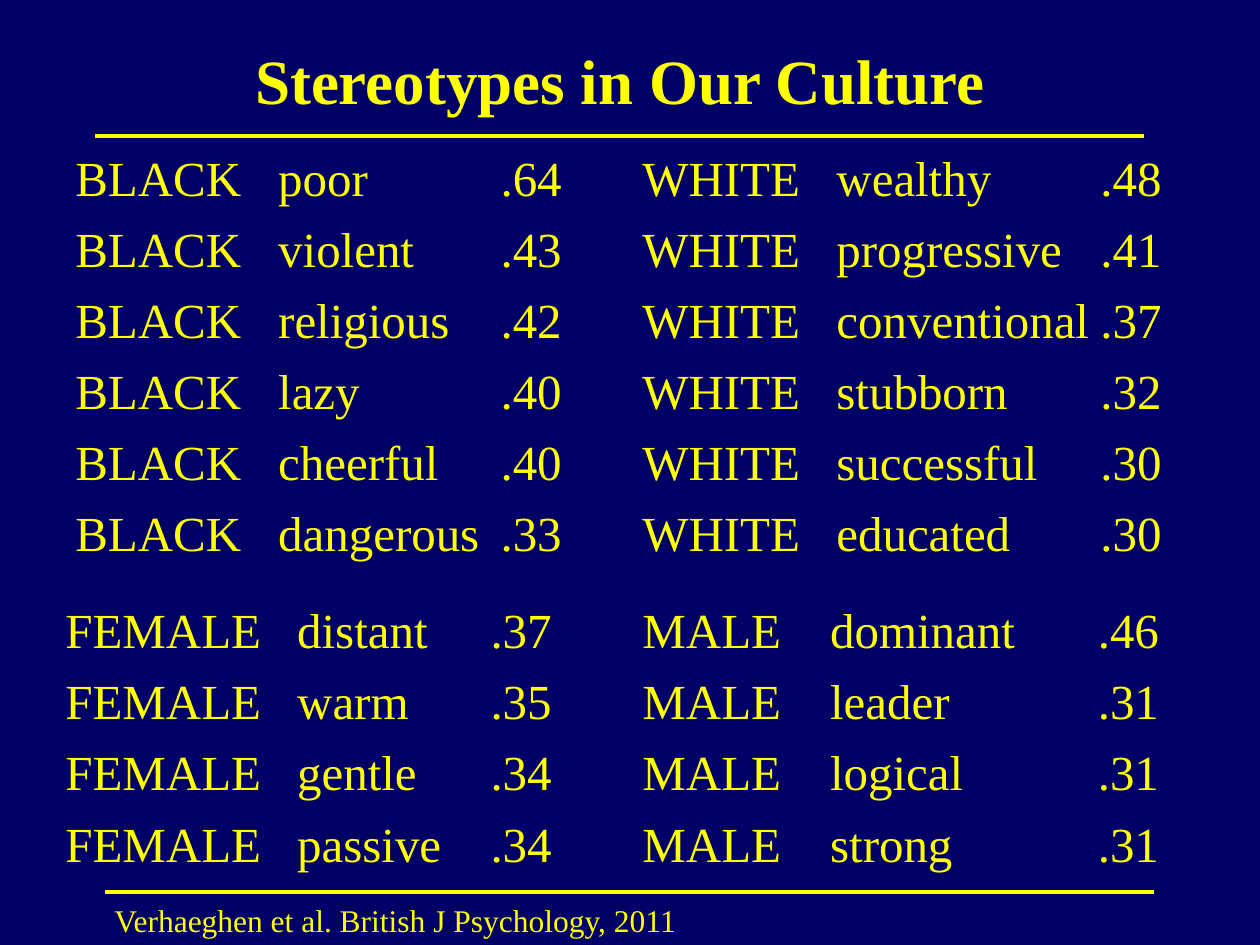
import pptx
import pptx.util
import pptx.dml.color
import pptx.enum.shapes
import pptx.enum.text
import pptx.oxml.ns
from lxml import etree

Inches = pptx.util.Inches
Pt = pptx.util.Pt
ANCHOR = pptx.enum.text.MSO_ANCHOR
ALIGN = pptx.enum.text.PP_ALIGN
qn = pptx.oxml.ns.qn
COLORS = {"back": "000066", "ink": "FFFF00"}
INK = pptx.dml.color.RGBColor.from_string(COLORS["ink"])

deck = pptx.Presentation()
deck.slide_width, deck.slide_height = Inches(10), Inches(7.5)
slide = deck.slides.add_slide(deck.slide_layouts[6])
fill = slide.background.fill
fill.solid()
fill.fore_color.rgb = pptx.dml.color.RGBColor.from_string(COLORS["back"])


def add_text(lines, box, size, bold=False, align=ALIGN.LEFT,
             anchor=ANCHOR.TOP, inset=0.05, gap=0, tabs=()):
    """Add a text box; tabs holds (position in inches, alignment) pairs."""
    frame = slide.shapes.add_textbox(*map(Inches, box)).text_frame
    frame.word_wrap = True
    frame.vertical_anchor = anchor
    frame.margin_top = Inches(inset)
    for i, line in enumerate(lines):
        para = frame.paragraphs[0] if i == 0 else frame.add_paragraph()
        para.alignment = align
        if i and gap:
            para.space_before = Pt(gap)
        if tabs:
            stops = etree.SubElement(para._p.get_or_add_pPr(), qn("a:tabLst"))
            for pos, side in tabs:
                etree.SubElement(stops, qn("a:tab"),
                                 pos=str(Inches(pos)), algn=side)
        run = para.add_run()
        run.text = line
        run.font.name = "Times New Roman"
        run.font.size = Pt(size)
        run.font.bold = bold
        run.font.color.rgb = INK


# Title
add_text(["Stereotypes in Our Culture"], (0.67, 0.17, 8.5, 0.92), 36,
         bold=True, align=ALIGN.CENTER, anchor=ANCHOR.MIDDLE)

# Rules above and below the lists
for left, top in [(0.75, 1.08), (0.83, 7.08)]:
    rule = slide.shapes.add_connector(
        pptx.enum.shapes.MSO_CONNECTOR.STRAIGHT,
        Inches(left), Inches(top), Inches(left + 8.33), Inches(top))
    rule.line.color.rgb = INK
    rule.line.width = Pt(2.25)
    etree.SubElement(rule._element.spPr, qn("a:effectLst"))

# Lists: group, box, tab stops for trait and score, rows
groups = [
    ("BLACK", (0.5, 1.08, 4.25, 3.58), (1.61, 3.86),
     [("poor", ".64"), ("violent", ".43"), ("religious", ".42"),
      ("lazy", ".40"), ("cheerful", ".40"), ("dangerous", ".33")]),
    ("FEMALE", (0.42, 4.67, 4.25, 2.33), (1.84, 3.86),
     [("distant", ".37"), ("warm", ".35"), ("gentle", ".34"),
      ("passive", ".34")]),
    ("WHITE", (5, 1.08, 4.42, 3.58), (1.54, 4.12),
     [("wealthy", ".48"), ("progressive", ".41"), ("conventional", ".37"),
      ("stubborn", ".32"), ("successful", ".30"), ("educated", ".30")]),
    ("MALE", (5, 4.67, 4.42, 2.33), (1.49, 4.1),
     [("dominant", ".46"), ("leader", ".31"), ("logical", ".31"),
      ("strong", ".31")]),
]
for group, box, (trait, score), rows in groups:
    add_text(["\t".join((group, *row)) for row in rows], box, 28,
             inset=0.09, gap=7, tabs=[(trait, "l"), (score, "r")])

# Citation
add_text(["Verhaeghen et al. British J Psychology, 2011"],
         (0.81, 7.1, 5.69, 0.4), 18)

deck.save("out.pptx")
